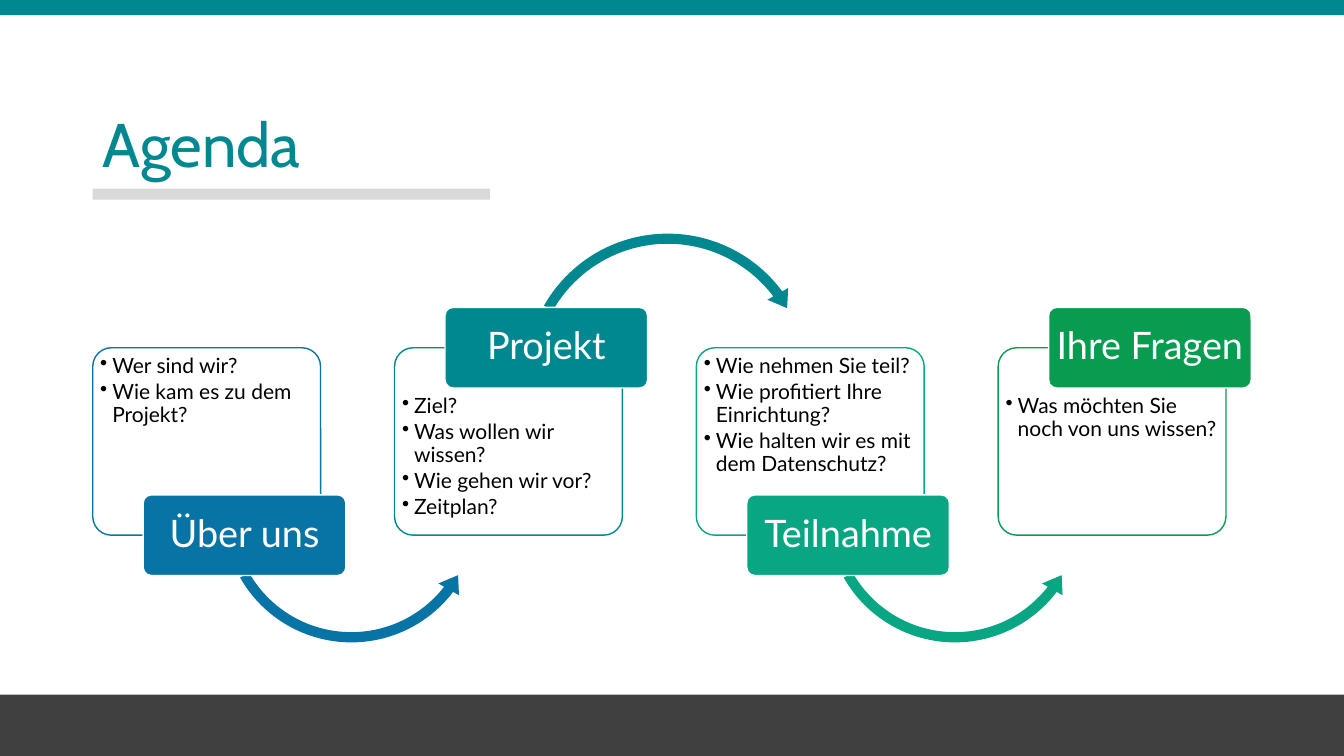
import pptx
import pptx.util
import pptx.dml.color
import pptx.enum.shapes
import pptx.enum.text
import lxml.etree

Inches, Pt = pptx.util.Inches, pptx.util.Pt
Preset = pptx.enum.shapes.MSO_SHAPE
Align, Anchor = pptx.enum.text.PP_ALIGN, pptx.enum.text.MSO_ANCHOR

theme = {
    "blue": "0874A6", "teal": "008890", "mint": "08A682", "green": "089C50",
    "white": "FFFFFF", "black": "000000", "rule": "D9D9D9", "footer": "404040",
    "heading_font": "Cabin", "body_font": "Lato",
    "title_size": 44, "label_size": 27, "bullet_size": 15,
}

deck = pptx.Presentation()
deck.slide_width, deck.slide_height = Inches(13.33), Inches(7.5)
slide = deck.slides.add_slide(deck.slide_layouts[6])


def add_block(preset, left, top, width, height, fill, line=None, adjustments=()):
    block = slide.shapes.add_shape(
        preset, Inches(left), Inches(top), Inches(width), Inches(height))
    block.shadow.inherit = False
    block.fill.solid()
    block.fill.fore_color.rgb = pptx.dml.color.RGBColor.from_string(theme[fill])
    if line:
        block.line.color.rgb = pptx.dml.color.RGBColor.from_string(theme[line])
        block.line.width = Pt(1)
    else:
        block.line.fill.background()
    for index, value in enumerate(adjustments):
        block.adjustments[index] = value
    return block


def write(block, lines, font, size, color, align, anchor, insets, bullets=False):
    frame = block.text_frame
    frame.word_wrap = align == Align.LEFT
    frame.vertical_anchor = anchor
    (frame.margin_left, frame.margin_top,
     frame.margin_right, frame.margin_bottom) = map(Inches, insets)
    for index, line in enumerate(lines):
        paragraph = frame.add_paragraph() if index else frame.paragraphs[0]
        paragraph.alignment = align
        paragraph.line_spacing = 0.9
        if bullets:
            paragraph.space_after = Pt(2.5)
            properties = paragraph._p.get_or_add_pPr()
            properties.set("marL", str(Inches(0.12)))
            properties.set("indent", str(Inches(-0.12)))
            bullet = lxml.etree.SubElement(properties, pptx.oxml.ns.qn("a:buChar"))
            bullet.set("char", "•")
        run = paragraph.add_run()
        run.text = line
        run.font.name = theme[font]
        run.font.size = Pt(theme[size])
        run.font.color.rgb = pptx.dml.color.RGBColor.from_string(theme[color])


margin = 0.92
add_block(Preset.RECTANGLE, 0, 6.89, 13.33, 0.61, "footer")
add_block(Preset.RECTANGLE, 0, 0, 13.33, 0.15, "teal")
add_block(Preset.RECTANGLE, margin, 1.87, 3.94, 0.11, "rule")

heading = slide.shapes.add_textbox(Inches(margin), Inches(1.08), Inches(11.5), Inches(0.77))
write(heading, ["Agenda"], "heading_font", "title_size", "teal",
      Align.LEFT, Anchor.MIDDLE, (0.1, 0.05, 0.1, 0.05))

agenda = [
    ("Über uns", "blue", ["Wer sind wir?", "Wie kam es zu dem Projekt?"]),
    ("Projekt", "teal", ["Ziel?", "Was wollen wir wissen?", "Wie gehen wir vor?", "Zeitplan?"]),
    ("Teilnahme", "mint", ["Wie nehmen Sie teil?", "Wie profitiert Ihre Einrichtung?",
                           "Wie halten wir es mit dem Datenschutz?"]),
    ("Ihre Fragen", "green", ["Was möchten Sie noch von uns wissen?"]),
]
arrow_below = (Preset.LEFT_CIRCULAR_ARROW, 3.77, 2.67, (0.038, 4.766, 22.521, 90.245, 0.044))
arrow_above = (Preset.CIRCULAR_ARROW, 2.25, 2.96, (0.034, 4.262, 193.982, 125.755, 0.04))
card_top, card_height, label_height = 3.45, 1.86, 0.8
column_pitch = 8.98 / 3

for step, (topic, color, questions) in enumerate(agenda):
    left = margin + step * column_pitch
    label_on_top = step % 2 == 1

    card = add_block(Preset.ROUNDED_RECTANGLE, left, card_top, 2.26, card_height,
                     "white", color, [0.1])
    write(card, questions, "body_font", "bullet_size", "black", Align.LEFT, Anchor.TOP,
          (0.02, 0.42 if label_on_top else 0.02, 0, 0), bullets=True)

    if step < len(agenda) - 1:
        preset, top, size, bend = arrow_above if label_on_top else arrow_below
        add_block(preset, left + 1.23, top, size, size, color, adjustments=bend)

    label_middle = card_top if label_on_top else card_top + card_height
    label = add_block(Preset.ROUNDED_RECTANGLE, left + 0.5, label_middle - label_height / 2,
                      2.01, label_height, color, "white", [0.1])
    write(label, [topic], "body_font", "label_size", "white", Align.CENTER, Anchor.MIDDLE,
          (0.06, 0.04, 0.06, 0.04))

deck.save("out.pptx")
